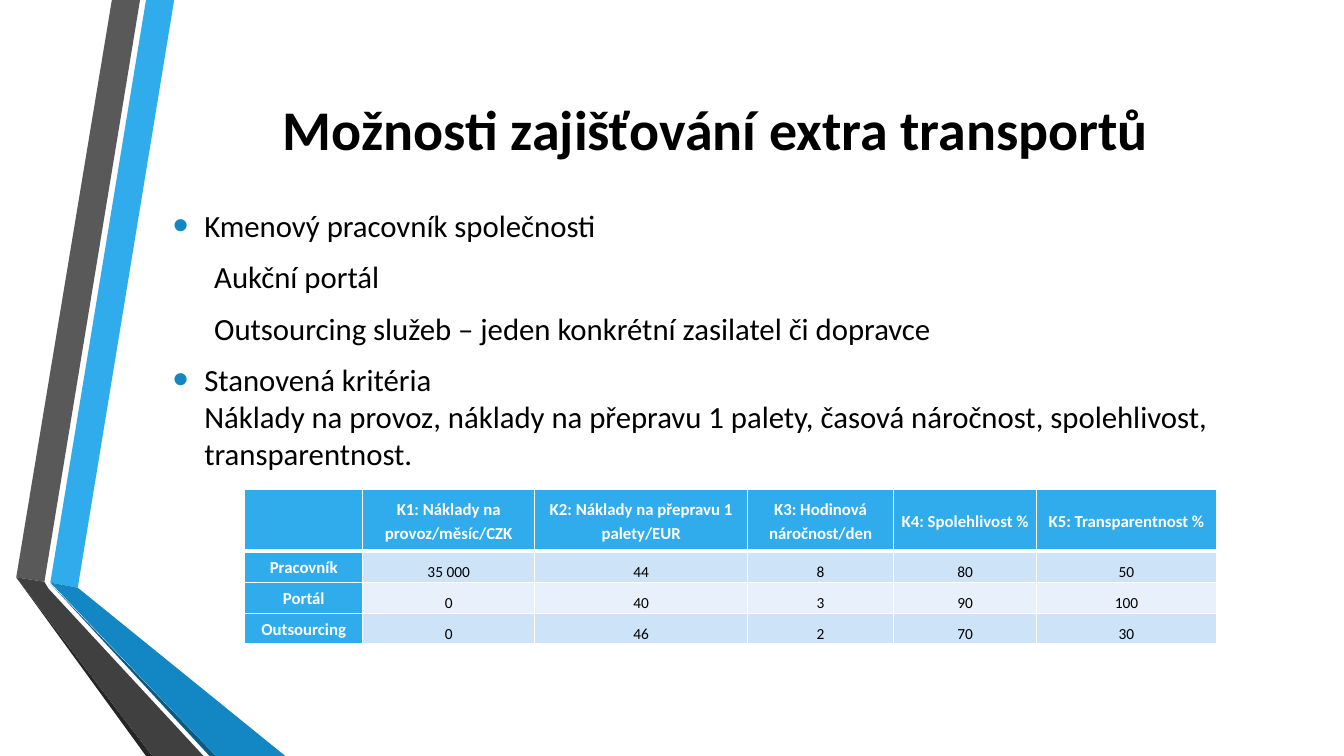
from lxml import etree
from pptx import Presentation
from pptx import util as u
from pptx.dml.color import RGBColor
from pptx.enum import text
from pptx.oxml.ns import qn

COLORS = {
    "sky": "30ACEC", "blue": "1287C3", "navy": "0C5A82",
    "gray": "595959", "charcoal": "404040", "coal": "262626",
    "band": "CDE3F8", "pale": "E8F1FB", "white": "FFFFFF", "black": "000000",
}

RIBBONS = [
    ("sky", [(1.27, 14.68), (1.96, 14.81), (4.39, 0), (3.68, 0)]),
    ("gray", [(3.53, 0), (2.82, 0), (0.41, 14.55), (1.12, 14.66)]),
    ("coal", [(0.41, 14.55), (3.68, 19.05), (3.84, 19.05)]),
    ("navy", [(1.27, 14.71), (5.28, 19.05), (5.44, 19.05)]),
    ("blue", [(1.27, 14.68), (5.44, 19.05), (7.19, 19.05), (1.96, 14.81)]),
    ("charcoal", [(5.13, 19.05), (1.22, 14.83), (1.12, 14.66), (0.41, 14.55), (3.84, 19.05)]),
]

OPTIONS = [
    (True, ["Kmenový pracovník společnosti"]),
    (False, ["Aukční portál"]),
    (False, ["Outsourcing služeb – jeden konkrétní zasilatel či dopravce"]),
    (True, ["Stanovená kritéria",
            "Náklady na provoz, náklady na přepravu 1 palety, časová náročnost, "
            "spolehlivost, transparentnost."]),
]

CRITERIA = [
    ["", "K1: Náklady na provoz/měsíc/CZK", "K2: Náklady na přepravu 1 palety/EUR",
     "K3: Hodinová náročnost/den", "K4: Spolehlivost %", "K5: Transparentnost %"],
    ["Pracovník", "35 000", "44", "8", "80", "50"],
    ["Portál", "0", "40", "3", "90", "100"],
    ["Outsourcing", "0", "46", "2", "70", "30"],
]
COLUMN_WIDTHS = [2.97, 4.34, 5.36, 3.68, 3.61, 4.52]
ROW_HEIGHTS = [1.55, 0.78, 0.78, 0.78]


class CriteriaSlide:
    """Holds the style and the slide, and draws each kind of element on it."""

    font = "Calibri"

    def __init__(self, slide):
        self.slide = slide

    def color(self, key):
        return RGBColor.from_string(COLORS[key])

    def run(self, paragraph, words, size, color="black", bold=False):
        run = paragraph.add_run()
        run.text = words
        run.font.name = self.font
        run.font.size = u.Pt(size)
        run.font.bold = bold
        run.font.color.rgb = self.color(color)

    def ribbon(self, color, corners):
        points = [(u.Cm(x), u.Cm(y)) for x, y in corners]
        builder = self.slide.shapes.build_freeform(*points[0])
        builder.add_line_segments(points[1:], close=True)
        band = builder.convert_to_shape()
        band.shadow.inherit = False
        band.fill.solid()
        band.fill.fore_color.rgb = self.color(color)
        band.line.fill.background()

    def text_frame(self, left, top, width, height, anchor):
        box = self.slide.shapes.add_textbox(*map(u.Cm, (left, top, width, height)))
        frame = box.text_frame
        frame.word_wrap = True
        frame.vertical_anchor = anchor
        return frame

    def title(self, words):
        frame = self.text_frame(4.11, 1.9, 27.84, 2.64, text.MSO_ANCHOR.MIDDLE)
        heading = frame.paragraphs[0]
        heading.alignment = text.PP_ALIGN.CENTER
        self.run(heading, words, 40, bold=True)

    def bullet(self, paragraph):
        props = paragraph._p.get_or_add_pPr()
        tint = etree.SubElement(props, qn("a:buClr"))
        etree.SubElement(tint, qn("a:srgbClr"), val=COLORS["blue"])
        etree.SubElement(props, qn("a:buSzPct"), val="145000")
        etree.SubElement(props, qn("a:buFont"), typeface="Arial")
        etree.SubElement(props, qn("a:buChar"), char="•")

    def options(self, items):
        frame = self.text_frame(4.11, 5.08, 27.84, 12.83, text.MSO_ANCHOR.TOP)
        for index, (bulleted, lines) in enumerate(items):
            option = frame.add_paragraph() if index else frame.paragraphs[0]
            option.space_before = u.Pt(4.4)
            option.space_after = u.Pt(6)
            props = option._p.get_or_add_pPr()
            props.set("marL", str(u.Cm(0.79 if bulleted else 1.04)))
            props.set("indent", str(u.Cm(-0.79 if bulleted else 0)))
            if bulleted:
                self.bullet(option)
            for number, line in enumerate(lines):
                if number:
                    option.add_line_break()
                self.run(option, line, 22)

    def borders(self, cell, row):
        widths = {"L": 1, "R": 1, "T": 3 if row == 1 else 1, "B": 3 if row == 0 else 1}
        props = cell._tc.get_or_add_tcPr()
        for side, width in widths.items():
            edge = etree.SubElement(props, qn(f"a:ln{side}"), w=str(u.Pt(width)))
            paint = etree.SubElement(edge, qn("a:solidFill"))
            etree.SubElement(paint, qn("a:srgbClr"), val=COLORS["white"])

    def cell(self, cell, words, row, column):
        heading = row == 0 or column == 0
        self.borders(cell, row)
        cell.fill.solid()
        cell.fill.fore_color.rgb = self.color(
            "sky" if heading else "band" if row % 2 else "pale")
        cell.margin_left = cell.margin_right = u.Cm(0.13)
        cell.margin_top = cell.margin_bottom = 0
        cell.vertical_anchor = text.MSO_ANCHOR.MIDDLE if heading else text.MSO_ANCHOR.BOTTOM
        if words:
            entry = cell.text_frame.paragraphs[0]
            entry.alignment = text.PP_ALIGN.CENTER
            entry.line_spacing = 1.15
            self.run(entry, words, 12 if heading else 11,
                     "white" if heading else "black", heading)

    def table(self, rows, widths, heights):
        frame = self.slide.shapes.add_table(
            len(rows), len(widths), u.Cm(6.17), u.Cm(12.34),
            u.Cm(sum(widths)), u.Cm(sum(heights)))
        grid = frame.table
        for column, width in zip(grid.columns, widths):
            column.width = u.Cm(width)
        for row, height in zip(grid.rows, heights):
            row.height = u.Cm(height)
        for r, values in enumerate(rows):
            for c, words in enumerate(values):
                self.cell(grid.cell(r, c), words, r, c)


def main():
    deck = Presentation()
    deck.slide_width, deck.slide_height = u.Cm(33.87), u.Cm(19.05)
    page = CriteriaSlide(deck.slides.add_slide(deck.slide_layouts[6]))
    for color, corners in RIBBONS:
        page.ribbon(color, corners)
    page.title("Možnosti zajišťování extra transportů")
    page.options(OPTIONS)
    page.table(CRITERIA, COLUMN_WIDTHS, ROW_HEIGHTS)
    deck.save("out.pptx")


if __name__ == "__main__":
    main()
